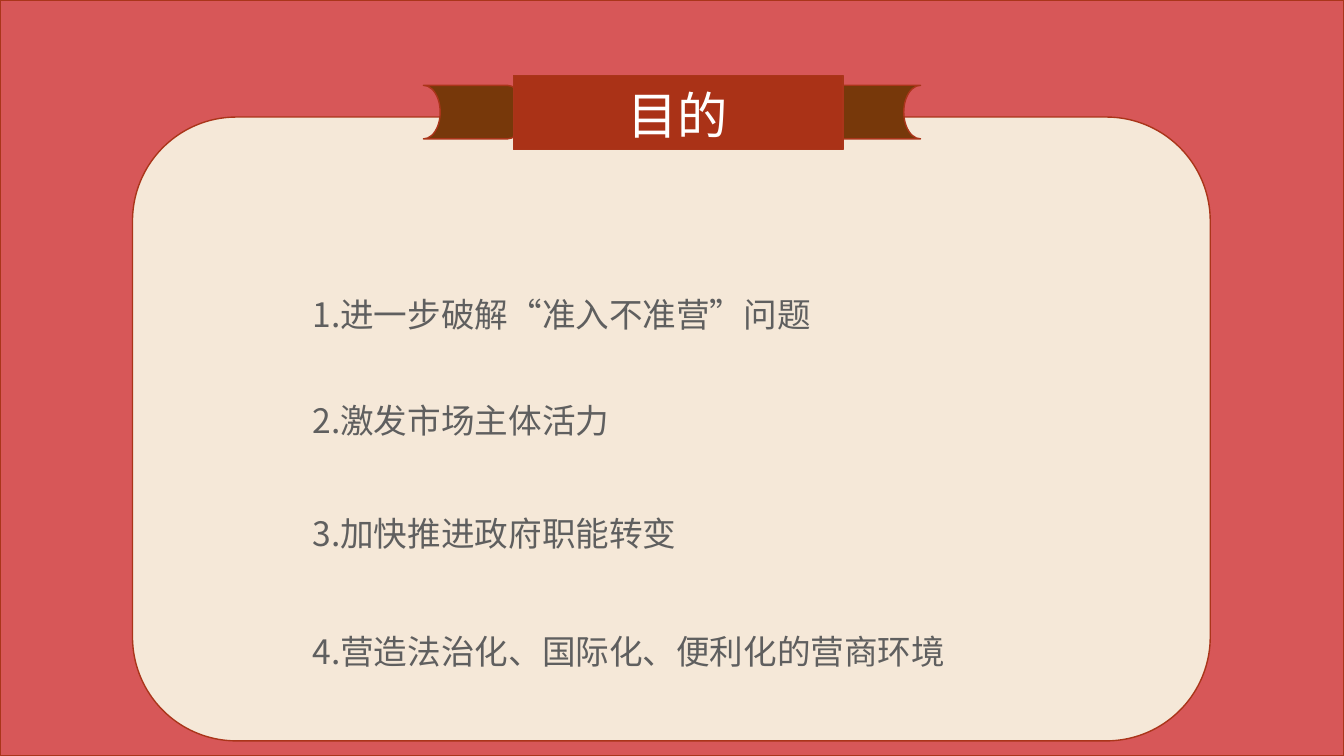
from lxml.etree import SubElement
from pptx import Presentation
from pptx.dml.color import RGBColor
from pptx.enum.lang import MSO_LANGUAGE_ID as Language
from pptx.enum.shapes import MSO_SHAPE as Preset
from pptx.enum.text import MSO_ANCHOR as Anchor, MSO_AUTO_SIZE as AutoSize, PP_ALIGN as Align
from pptx.oxml.ns import qn
from pptx.util import Cm, Pt

FONT = "Noto Sans CJK JP"
COLORS = {
    "backdrop": "D75758",
    "panel": "F5E8D8",
    "fold": "77380A",
    "banner": "AA3217",
    "outline": "AA351A",
    "title": "FFFFFF",
    "text": "5F5F5F",
}
GOALS = [
    ("1.进一步破解“准入不准营”问题", 0),
    ("2.激发市场主体活力", 46.6),
    ("3.加快推进政府职能转变", 51.6),
    ("4.营造法治化、国际化、便利化的营商环境", 56),
]


def color(name):
    """Return the named palette colour."""
    return RGBColor.from_string(COLORS[name])


def add_block(slide, preset, fill, left, top, width, height, rotation=0):
    """Add a filled, outlined preset shape measured in centimetres."""
    shape = slide.shapes.add_shape(preset, Cm(left), Cm(top), Cm(width), Cm(height))
    shape.shadow.inherit = False
    shape.fill.solid()
    shape.fill.fore_color.rgb = color(fill)
    shape.line.color.rgb = color("outline")
    shape.line.width = Pt(1)
    shape.rotation = rotation


def place(placeholder, left, top, width, height, anchor):
    """Move a placeholder to its place, in front of the other shapes."""
    placeholder.left, placeholder.top = Cm(left), Cm(top)
    placeholder.width, placeholder.height = Cm(width), Cm(height)
    placeholder.element.getparent().append(placeholder.element)
    text_frame = placeholder.text_frame
    text_frame.word_wrap = True
    text_frame.auto_size = AutoSize.NONE
    text_frame.vertical_anchor = anchor
    return text_frame


def format_paragraph(paragraph, size, color_name, align, space_before=0):
    """Set spacing, alignment and font of a paragraph without a bullet."""
    paragraph.alignment = align
    paragraph.space_before = Pt(space_before)
    properties = paragraph._p.get_or_add_pPr()
    properties.set("marL", "0")
    properties.set("indent", "0")
    SubElement(properties, qn("a:buNone"))
    for run in paragraph.runs:
        run.font.size = Pt(size)
        run.font.name = FONT
        run.font.color.rgb = color(color_name)
        run.font.language_id = Language.SIMPLIFIED_CHINESE
        SubElement(run._r.get_or_add_rPr(), qn("a:ea"), typeface=FONT)


def add_title(slide):
    """Write the title on the banner."""
    text_frame = place(slide.shapes.title, 12.9, 1.98, 8.36, 1.8, Anchor.MIDDLE)
    text_frame.text = "目的"
    format_paragraph(text_frame.paragraphs[0], 36, "title", Align.CENTER)


def add_goals(slide):
    """Write the numbered goals on the panel."""
    text_frame = place(slide.placeholders[1], 7.62, 7.29, 16.69, 10.39, Anchor.TOP)
    text_frame.text = "\n".join(goal for goal, _ in GOALS)
    for paragraph, (_, gap) in zip(text_frame.paragraphs, GOALS):
        format_paragraph(paragraph, 24, "text", Align.LEFT, gap)


def main():
    """Build the slide and save it."""
    presentation = Presentation()
    presentation.slide_width, presentation.slide_height = Cm(33.87), Cm(19.05)
    slide = presentation.slides.add_slide(presentation.slide_layouts[1])
    add_block(slide, Preset.RECTANGLE, "backdrop", 0, 0, 33.87, 19.05)
    add_block(slide, Preset.FLOWCHART_ALTERNATE_PROCESS, "panel", 3.34, 2.95, 27.16, 15.72)
    for left, rotation in ((20.66, 0), (10.67, 180)):
        add_block(slide, Preset.FLOWCHART_STORED_DATA, "fold", left, 2.15, 2.54, 1.35, rotation)
    add_block(slide, Preset.RECTANGLE, "banner", 12.94, 1.91, 8.31, 1.86)
    add_title(slide)
    add_goals(slide)
    presentation.save("out.pptx")


if __name__ == "__main__":
    main()
